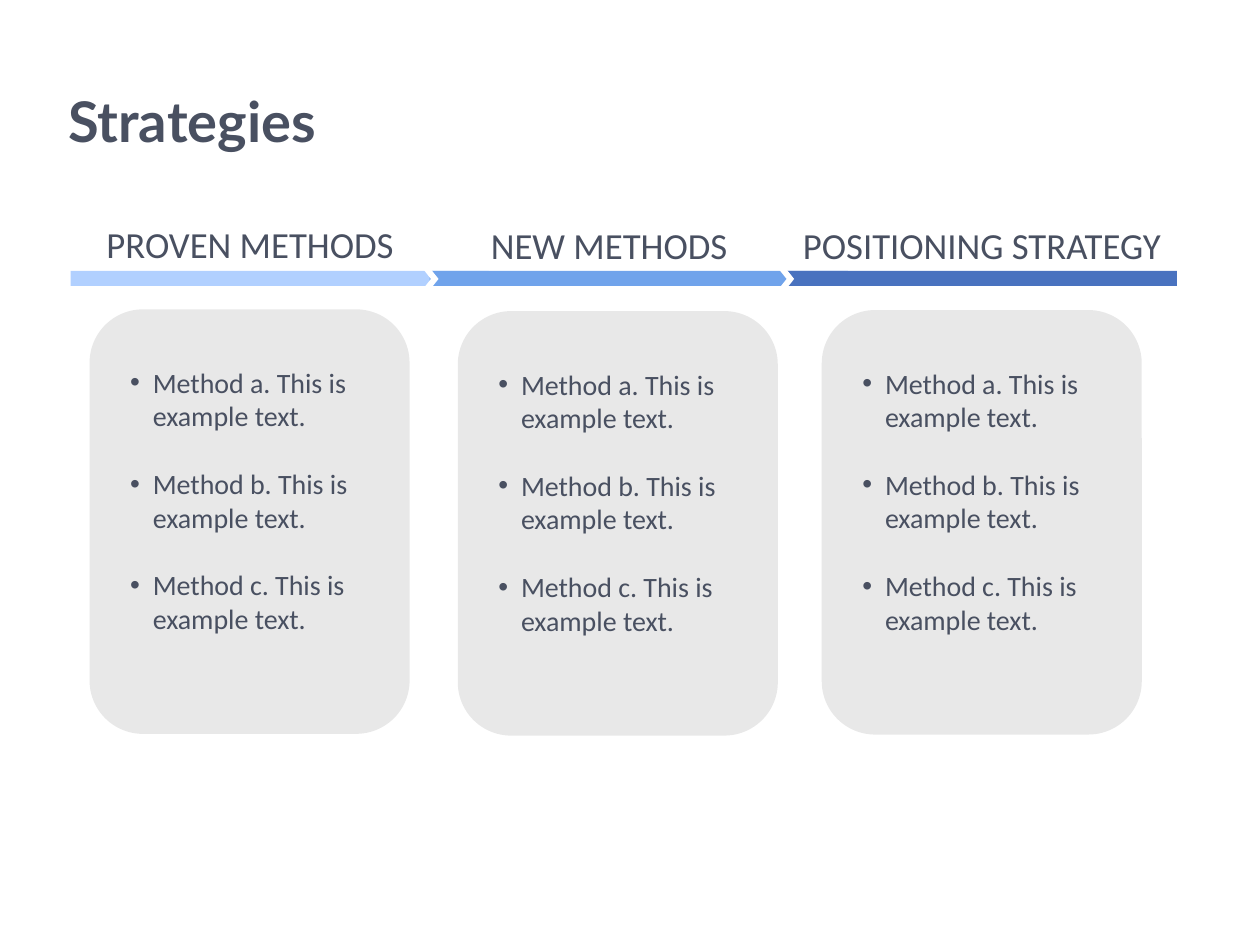
import pptx
import pptx.dml.color
import pptx.enum.shapes
import pptx.enum.text
import pptx.oxml
import pptx.oxml.ns
import pptx.util

Pt = pptx.util.Pt
SHAPES = pptx.enum.shapes.MSO_SHAPE
ALIGN = pptx.enum.text.PP_ALIGN
ANCHOR = pptx.enum.text.MSO_ANCHOR
COLORS = {
    "text": "495061",
    "card": "E8E8E8",
    "gap": "FFFFFF",
    "light": "B1D0FF",
    "medium": "70A3EB",
    "dark": "4972BF",
}
METHODS = [f"Method {letter}. This is example text." for letter in "abc"]


def rgb(name):
    """Return the named palette colour."""
    return pptx.dml.color.RGBColor.from_string(COLORS[name])


def write_text(paragraph, text, size=16, font="Calibri", bold=False,
               align=ALIGN.LEFT, indent=0, hanging=0, before=0, bullet=False):
    """Write formatted text into a paragraph."""
    run = paragraph.add_run()
    run.text = text
    run.font.size = Pt(size)
    run.font.name = font
    run.font.bold = bold
    run.font.color.rgb = rgb("text")
    paragraph.alignment = align
    paragraph.space_before = Pt(before)
    properties = paragraph._p.get_or_add_pPr()
    properties.set("marL", str(Pt(indent)))
    properties.set("indent", str(Pt(-hanging)))
    if bullet:
        namespace = pptx.oxml.ns.nsdecls("a")
        for markup in (
            f'<a:buClr {namespace}><a:srgbClr val="{COLORS["text"]}"/></a:buClr>',
            f'<a:buFont {namespace} typeface="Arial"/>',
            f'<a:buChar {namespace} char="•"/>',
        ):
            properties.append(pptx.oxml.parse_xml(markup))


def add_block(slide, kind, left, top, width, height, color):
    """Add a flat filled shape without outline or shadow."""
    shape = slide.shapes.add_shape(kind, Pt(left), Pt(top), Pt(width), Pt(height))
    shape.shadow.inherit = False
    shape.fill.solid()
    shape.fill.fore_color.rgb = rgb(color)
    shape.line.fill.background()
    return shape


def add_title(slide, left, top, width, height):
    """Place and format the slide title."""
    title = slide.shapes.title
    title.left, title.top = Pt(left), Pt(top)
    title.width, title.height = Pt(width), Pt(height)
    title.text_frame.vertical_anchor = ANCHOR.MIDDLE
    write_text(title.text_frame.paragraphs[0], "Strategies", size=32,
               font="Lato", bold=True, indent=28.8)


def add_heading(slide, text, color, left, top, width, bar_width):
    """Place a column heading over its coloured bar."""
    heading = slide.shapes.add_textbox(Pt(left), Pt(top), Pt(width), Pt(32.4))
    heading.text_frame.word_wrap = True
    write_text(heading.text_frame.paragraphs[0], text, size=21, align=ALIGN.CENTER)
    add_block(slide, SHAPES.RECTANGLE, left, 154.8, bar_width, 8.6, color)


def add_card(slide, left, top, width, height):
    """Place a rounded card with the bulleted methods."""
    card = add_block(slide, SHAPES.ROUNDED_RECTANGLE, left, top, width, height, "card")
    card.adjustments[0] = 0.167
    frame = card.text_frame
    frame.word_wrap = True
    frame.vertical_anchor = ANCHOR.TOP
    frame.margin_top = Pt(23.1)
    for index, method in enumerate(METHODS):
        paragraph = frame.add_paragraph() if index else frame.paragraphs[0]
        write_text(paragraph, method, indent=20.16, hanging=12.96,
                   before=19.5 if index else 0, bullet=True)


def main():
    """Build and save the strategies slide."""
    presentation = pptx.Presentation()
    presentation.slide_width, presentation.slide_height = Pt(720), Pt(540)
    slide = presentation.slides.add_slide(presentation.slide_layouts[5])
    add_title(slide, 2.9, 44.6, 720, 48.2)
    headings = (
        ("PROVEN METHODS", "light", 40.3, 123.1, 205.2, 239),
        ("NEW METHODS", "medium", 245.5, 123.8, 205.2, 239),
        ("POSITIONING STRATEGY", "dark", 449.5, 123.8, 223.2, 223),
    )
    for heading in headings:
        add_heading(slide, *heading)
    for left, top in ((51.2, 176.8), (261.6, 177.8), (469.6, 177.2)):
        add_card(slide, left, top, 182.9, 242.6)
    for left in (242, 445.2):
        add_block(slide, SHAPES.CHEVRON, left, 154, 8.6, 10.8, "gap")
    presentation.save("out.pptx")


if __name__ == "__main__":
    main()
